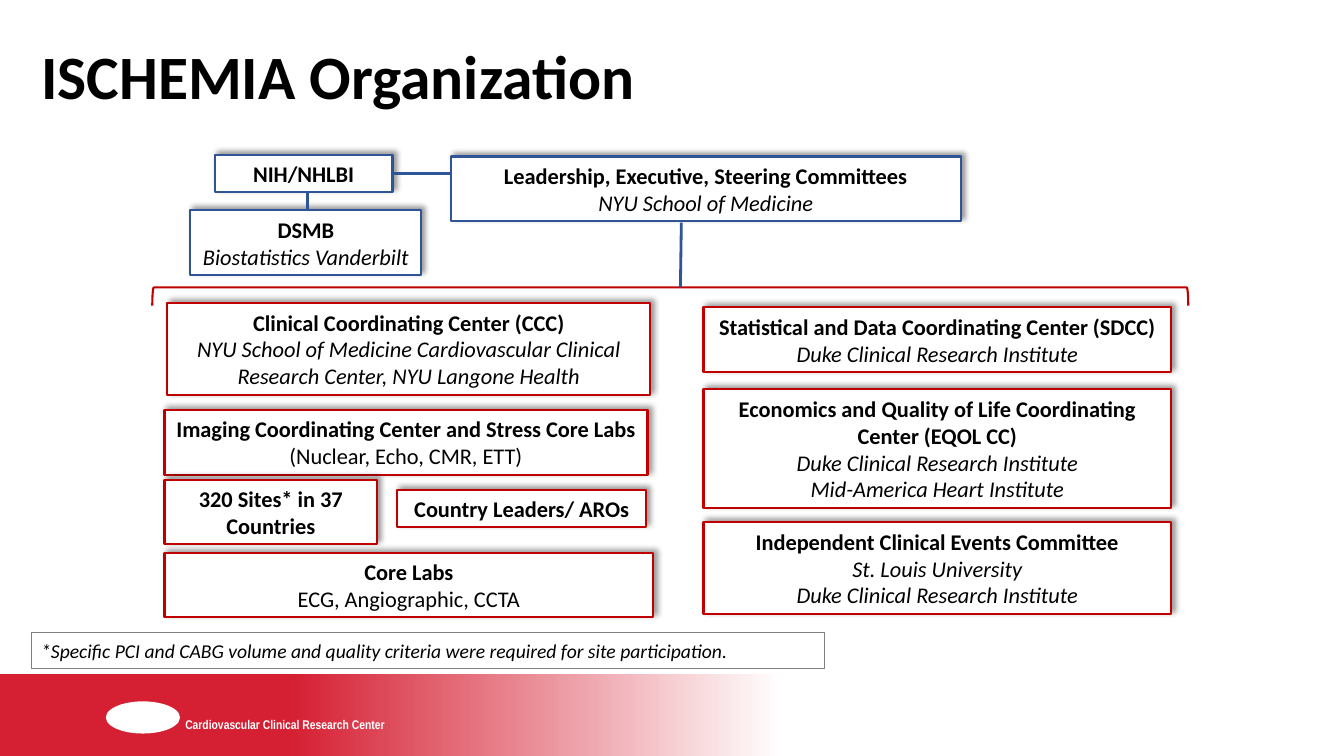
from lxml.etree import SubElement
from pptx import Presentation
from pptx.dml.color import RGBColor
from pptx.enum.shapes import MSO_CONNECTOR, MSO_SHAPE
from pptx.enum.text import MSO_ANCHOR, MSO_AUTO_SIZE, PP_ALIGN
from pptx.oxml.ns import qn
from pptx.util import Pt

BLACK = RGBColor(0x00, 0x00, 0x00)
WHITE = RGBColor(0xFF, 0xFF, 0xFF)
BLUE = RGBColor(0x2F, 0x55, 0x97)
RED = RGBColor(0xC0, 0x00, 0x00)
CRIMSON = RGBColor(0xD5, 0x1F, 0x32)
GRAY = RGBColor(0x80, 0x80, 0x80)

LEFT, LEFT_WIDTH = 117.5, 345
RIGHT, RIGHT_WIDTH = 502.5, 334


class OrgSlide:
    font = "Calibri"
    text_size = 16

    def __init__(self, presentation):
        self.slide = presentation.slides.add_slide(presentation.slide_layouts[5])
        self.shapes = self.slide.shapes

    def set_lines(self, shape, lines, size, align, color=BLACK, font=None):
        frame = shape.text_frame
        frame.word_wrap = True
        frame.text = "\n".join(text for text, style in lines)
        for paragraph, (text, style) in zip(frame.paragraphs, lines):
            paragraph.alignment = align
            for run in paragraph.runs:
                run.font.name = font or self.font
                run.font.size = Pt(size)
                run.font.color.rgb = color
                run.font.bold = style == "bold"
                run.font.italic = style == "italic"
        return frame

    def title(self, text, left, top, width, height):
        title = self.shapes.title
        title.left, title.top = Pt(left), Pt(top)
        title.width, title.height = Pt(width), Pt(height)
        frame = self.set_lines(title, [(text, "bold")], 44, PP_ALIGN.LEFT)
        frame.auto_size = MSO_AUTO_SIZE.NONE
        frame.vertical_anchor = MSO_ANCHOR.MIDDLE
        frame.paragraphs[0].line_spacing = 0.9

    def shape(self, kind, left, top, width, height, fill=None, line=None, weight=1.5):
        shape = self.shapes.add_shape(kind, Pt(left), Pt(top), Pt(width), Pt(height))
        shape.shadow.inherit = False
        if fill is None:
            shape.fill.background()
        else:
            shape.fill.solid()
            shape.fill.fore_color.rgb = fill
        if line is None:
            shape.line.fill.background()
        else:
            shape.line.color.rgb = line
            shape.line.width = Pt(weight)
        return shape

    def box(self, left, top, width, height, line, *lines):
        box = self.shape(MSO_SHAPE.RECTANGLE, left, top, width, height, WHITE, line)
        effects = box._element.spPr.find(qn("a:effectLst"))
        shadow = SubElement(effects, qn("a:outerShdw"), blurRad=str(Pt(4)),
                            dist=str(Pt(3)), dir="18900000", algn="bl", rotWithShape="0")
        color = SubElement(shadow, qn("a:srgbClr"), val="000000")
        SubElement(color, qn("a:alpha"), val="40000")
        frame = self.set_lines(box, lines, self.text_size, PP_ALIGN.CENTER)
        frame.vertical_anchor = MSO_ANCHOR.MIDDLE
        frame.auto_size = MSO_AUTO_SIZE.SHAPE_TO_FIT_TEXT

    def link(self, x1, y1, x2, y2):
        link = self.shapes.add_connector(MSO_CONNECTOR.STRAIGHT, Pt(x1), Pt(y1), Pt(x2), Pt(y2))
        link.line.color.rgb = BLUE
        link.line.width = Pt(2)
        SubElement(link._element.spPr, qn("a:effectLst"))

    def bracket(self, left, top, span, depth):
        bracket = self.shape(MSO_SHAPE.RIGHT_BRACKET, left + (span - depth) / 2,
                             top - (span - depth) / 2, depth, span, line=RED)
        bracket.rotation = 270

    def footnote(self, text, left, top, width, height):
        note = self.shape(MSO_SHAPE.RECTANGLE, left, top, width, height, line=GRAY, weight=0.75)
        frame = self.set_lines(note, [(text, "italic")], 14, PP_ALIGN.LEFT)
        frame.vertical_anchor = MSO_ANCHOR.TOP
        frame.paragraphs[0].line_spacing = 1.07

    def footer(self, text):
        band = self.shape(MSO_SHAPE.RECTANGLE, -0.7, 481.7, 560, 58.3)
        band.fill.gradient()
        band.fill.gradient_angle = 180
        for stop, (position, color) in zip(band.fill.gradient_stops, [(0, WHITE), (0.63, CRIMSON)]):
            stop.position = position
            stop.color.rgb = color
        self.shape(MSO_SHAPE.OVAL, 75.6, 501, 53, 23, WHITE)
        label = self.shapes.add_textbox(Pt(125.3), Pt(508.3), Pt(172), Pt(11))
        self.set_lines(label, [(text, "bold")], 9, PP_ALIGN.LEFT, WHITE, "Arial Narrow")


def main():
    presentation = Presentation()
    presentation.slide_width, presentation.slide_height = Pt(960), Pt(540)
    org = OrgSlide(presentation)

    org.footer("Cardiovascular Clinical Research Center")
    org.title("ISCHEMIA Organization", 22.3, 18.7, 893.5, 75.6)

    org.box(136, 150.3, 165, 46, BLUE,
            ("DSMB", "bold"), ("Biostatistics Vanderbilt", "italic"))
    org.box(153.4, 110.7, 127, 26.7, BLUE, ("NIH/NHLBI", "bold"))
    org.box(322, 111.8, 364.3, 46, BLUE,
            ("Leadership, Executive, Steering Committees", "bold"),
            ("NYU School of Medicine", "italic"))

    org.box(119.5, 216.5, LEFT_WIDTH, 65.5, RED,
            ("Clinical Coordinating Center (CCC)", "bold"),
            ("NYU School of Medicine Cardiovascular Clinical Research Center, "
             "NYU Langone Health", "italic"))
    org.box(LEFT, 293, LEFT_WIDTH, 46, RED,
            ("Imaging Coordinating Center and Stress Core Labs", "bold"),
            ("(Nuclear, Echo, CMR, ETT)", "plain"))
    org.box(LEFT, 342.7, 152, 46, RED, ("320 Sites* in 37 Countries", "bold"))
    org.box(283.7, 350, 178, 26.7, RED, ("Country Leaders/ AROs", "bold"))
    org.box(LEFT, 394.8, 349.2, 46, RED,
            ("Core Labs", "bold"), ("ECG, Angiographic, CCTA", "plain"))

    duke = ("Duke Clinical Research Institute", "italic")
    org.box(RIGHT, 219.6, RIGHT_WIDTH, 46, RED,
            ("Statistical and Data Coordinating Center (SDCC)", "bold"), duke)
    org.box(RIGHT, 278, RIGHT_WIDTH, 85, RED,
            ("Economics and Quality of Life Coordinating Center (EQOL CC)", "bold"),
            duke, ("Mid-America Heart Institute", "italic"))
    org.box(RIGHT, 373, RIGHT_WIDTH, 65.5, RED,
            ("Independent Clinical Events Committee", "bold"),
            ("St. Louis University", "italic"), duke)

    org.link(219.6, 149.8, 219.6, 138.2)
    org.bracket(108.8, 205.3, 740, 13)
    org.link(486, 205.2, 486.7, 159.1)
    org.footnote("*Specific PCI and CABG volume and quality criteria were required "
                 "for site participation.", 22.3, 452, 566.6, 25.5)
    org.link(322, 123.8, 280.1, 123.8)

    presentation.save("out.pptx")


if __name__ == "__main__":
    main()
